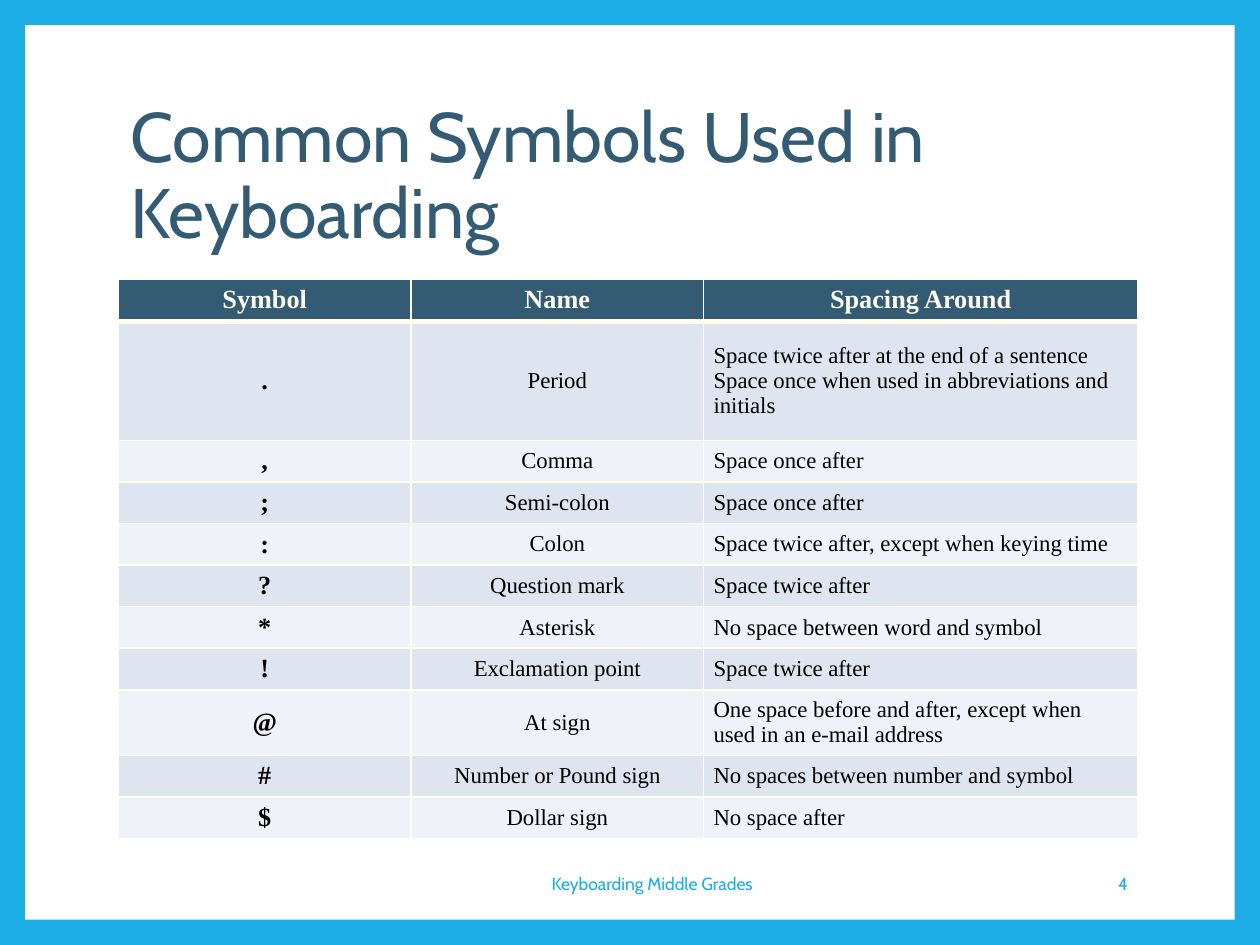
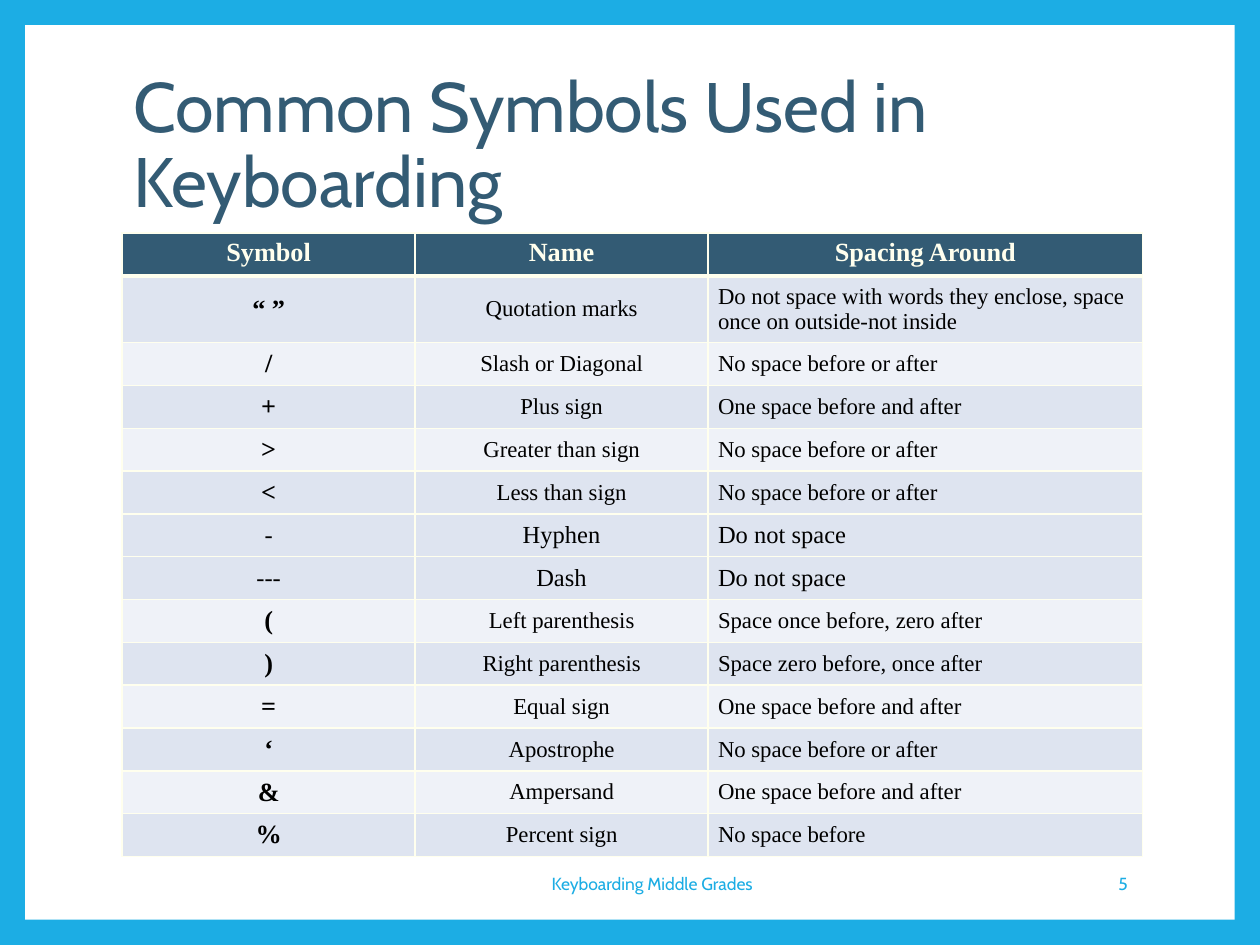
"""Build two slides that list common keyboarding symbols and their spacing."""
from lxml import etree
from pptx import Presentation
from pptx.dml.color import RGBColor
from pptx.enum.shapes import MSO_SHAPE
from pptx.enum.text import MSO_ANCHOR, PP_ALIGN
from pptx.oxml.ns import qn
from pptx.util import Inches, Pt

RECTANGLE = MSO_SHAPE.RECTANGLE
TOP, MIDDLE = MSO_ANCHOR.TOP, MSO_ANCHOR.MIDDLE
LEFT, CENTER, RIGHT = PP_ALIGN.LEFT, PP_ALIGN.CENTER, PP_ALIGN.RIGHT

COLORS = {
    "sky": "1CADE4",
    "panel": "FFFFFF",
    "navy": "335B74",
    "cream": "FFFFEE",
    "ink": "000000",
    "dark_band": "DEE4F0",
    "light_band": "EFF2F8",
}

presentation = Presentation()
presentation.slide_width = Inches(10)
presentation.slide_height = Inches(7.5)
GRID = presentation.slide_width / 100

TITLE = "Common Symbols Used in Keyboarding"
FOOTER = "Keyboarding Middle Grades"
HEADINGS = ("Symbol", "Name", "Spacing Around")
COLUMN_SHARES = (0.287, 0.287, 0.426)
REGULAR_SYMBOLS = ("-", "---")
CELL_MARGINS = {"margin_left": Inches(0.08), "margin_right": Inches(0.08),
                "margin_top": Inches(0.04), "margin_bottom": Inches(0.04)}

TITLE_FORMAT = {"name": "Cabin", "size": Pt(40), "color": "navy"}
FOOTER_FORMAT = {"name": "Cabin", "size": Pt(10), "color": "sky"}
HEADING_FORMAT = {"name": "Times New Roman", "size": Pt(15), "bold": True, "color": "cream"}
SYMBOL_FORMAT = {**HEADING_FORMAT, "color": "ink"}
BODY_FORMAT = {**SYMBOL_FORMAT, "size": Pt(13), "bold": False}
REGULAR_FORMAT = {**BODY_FORMAT, "size": Pt(14)}

SLIDES = [
    {
        "number": "4",
        "title_at": (9.4, 6.7),
        "table_at": (9.4, 22.2),
        "table_width": 80.9,
        "row_height": 3.28,
        "tall_rows": {1: 9.45, 8: 5.2},
        "symbols": [
            (".", "Period", "Space twice after at the end of a sentence\n"
                            "Space once when used in abbreviations and initials"),
            (",", "Comma", "Space once after"),
            (";", "Semi-colon", "Space once after"),
            (":", "Colon", "Space twice after, except when keying time"),
            ("?", "Question mark", "Space twice after"),
            ("*", "Asterisk", "No space between word and symbol"),
            ("!", "Exclamation point", "Space twice after"),
            ("@", "At sign", "One space before and after, except when used in an e-mail address"),
            ("#", "Number or Pound sign", "No spaces between number and symbol"),
            ("$", "Dollar sign", "No space after"),
        ],
    },
    {
        "number": "5",
        "title_at": (9.6, 4.3),
        "table_at": (9.7, 18.5),
        "table_width": 81,
        "row_height": 3.4,
        "tall_rows": {1: 5.3},
        "symbols": [
            ("“ ”", "Quotation marks",
             "Do not space with words they enclose, space once on outside-not inside"),
            ("/", "Slash or Diagonal", "No space before or after"),
            ("+", "Plus sign", "One space before and after"),
            (">", "Greater than sign", "No space before or after"),
            ("<", "Less than sign", "No space before or after"),
            ("-", "Hyphen", "Do not space"),
            ("---", "Dash", "Do not space"),
            ("(", "Left parenthesis", "Space once before, zero after"),
            (")", "Right parenthesis", "Space zero before, once after"),
            ("=", "Equal sign", "One space before and after"),
            ("‘", "Apostrophe", "No space before or after"),
            ("&", "Ampersand", "One space before and after"),
            ("%", "Percent sign", "No space before"),
        ],
    },
]


def place(*lengths):
    """Turn grid lengths into slide lengths."""
    return [round(length * GRID) for length in lengths]


def write(text_frame, text, alignment, text_format, line_spacing=None):
    """Fill a text frame and format each of its paragraphs."""
    text_frame.text = text
    text_frame.word_wrap = True
    for paragraph in text_frame.paragraphs:
        paragraph.alignment = alignment
        paragraph.line_spacing = line_spacing
        for run in paragraph.runs:
            for attribute, value in text_format.items():
                if attribute == "color":
                    run.font.color.rgb = RGBColor.from_string(COLORS[value])
                else:
                    setattr(run.font, attribute, value)


for content in SLIDES:
    slide = presentation.slides.add_slide(presentation.slide_layouts[6])
    slide.background.fill.solid()
    slide.background.fill.fore_color.rgb = RGBColor.from_string(COLORS["sky"])
    panel = slide.shapes.add_shape(RECTANGLE, *place(2, 2, 96, 71))
    panel.shadow.inherit = False
    panel.fill.solid()
    panel.fill.fore_color.rgb = RGBColor.from_string(COLORS["panel"])
    panel.line.fill.background()

    labels = [
        ((*content["title_at"], 81, 14.8), TITLE, LEFT, TITLE_FORMAT, 0.9),
        ((32.4, 68.1, 38.7, 4), FOOTER, CENTER, FOOTER_FORMAT, None),
        ((76.5, 68.1, 14, 4), content["number"], RIGHT, FOOTER_FORMAT, None),
    ]
    for position, text, alignment, text_format, line_spacing in labels:
        text_box = slide.shapes.add_textbox(*place(*position))
        text_box.text_frame.vertical_anchor = MIDDLE
        write(text_box.text_frame, text, alignment, text_format, line_spacing)

    rows = [HEADINGS, *content["symbols"]]
    heights = [content["tall_rows"].get(index, content["row_height"]) for index in range(len(rows))]
    table_position = place(*content["table_at"], content["table_width"], sum(heights))
    table = slide.shapes.add_table(len(rows), len(HEADINGS), *table_position).table
    for column, share in zip(table.columns, COLUMN_SHARES):
        column.width = round(share * content["table_width"] * GRID)

    for row_index, (texts, height) in enumerate(zip(rows, heights)):
        table.rows[row_index].height = round(height * GRID)
        is_heading = row_index == 0
        is_regular = texts[0] in REGULAR_SYMBOLS
        if is_heading:
            formats, fill = [HEADING_FORMAT] * 3, "navy"
        else:
            formats = [REGULAR_FORMAT] * 3 if is_regular else [SYMBOL_FORMAT, BODY_FORMAT, BODY_FORMAT]
            fill = "dark_band" if row_index % 2 or is_regular else "light_band"
        borders = {"lnL": 1, "lnR": 1, "lnT": 3 if row_index == 1 else 1, "lnB": 3 if is_heading else 1}

        for column_index, (text, text_format) in enumerate(zip(texts, formats)):
            cell = table.cell(row_index, column_index)
            alignment = CENTER if is_heading or column_index < 2 else LEFT
            write(cell.text_frame, text, alignment, text_format)
            cell.vertical_anchor = TOP if is_heading else MIDDLE
            for attribute, value in CELL_MARGINS.items():
                setattr(cell, attribute, value)
            cell.fill.solid()
            cell.fill.fore_color.rgb = RGBColor.from_string(COLORS[fill])
            properties = cell._tc.get_or_add_tcPr()
            for order, (side, width) in enumerate(borders.items()):
                border = etree.Element(qn(f"a:{side}"), w=str(Pt(width)))
                solid_fill = etree.SubElement(border, qn("a:solidFill"))
                etree.SubElement(solid_fill, qn("a:srgbClr"), val=COLORS["cream"])
                properties.insert(order, border)

presentation.save("out.pptx")
